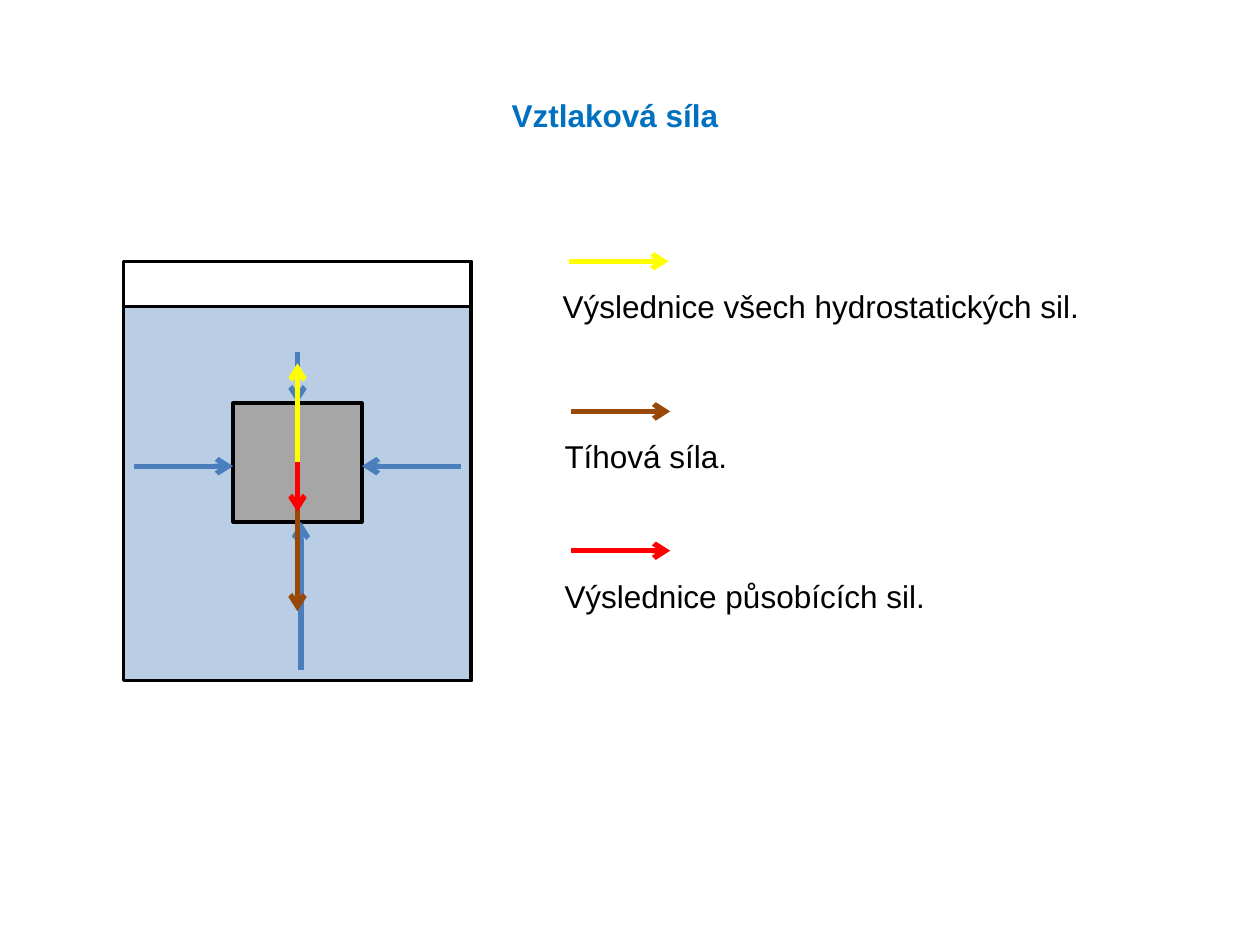
from lxml.etree import SubElement
from pptx import Presentation
from pptx.dml.color import RGBColor
from pptx.enum.shapes import MSO_CONNECTOR, MSO_SHAPE
from pptx.enum.text import MSO_AUTO_SIZE, PP_ALIGN
from pptx.oxml.ns import qn
from pptx.util import Pt


class Sketch:
    """Draws styled boxes, arrows and labels on one slide."""

    hues = {
        "title": "0070C0", "ink": "000000", "water": "B9CDE5", "block": "A6A6A6",
        "press": "4B7EBC", "lift": "FFFF00", "weight": "984807", "net": "FF0000",
    }
    text = {"name": "Arial", "size": Pt(18)}

    def __init__(self, slide):
        self.shapes = slide.shapes

    def hue(self, name):
        return RGBColor.from_string(self.hues[name])

    def box(self, left, top, width, height, fill=None):
        shape = self.shapes.add_shape(
            MSO_SHAPE.RECTANGLE, Pt(left), Pt(top), Pt(width), Pt(height))
        shape.shadow.inherit = False
        if fill:
            shape.fill.solid()
            shape.fill.fore_color.rgb = self.hue(fill)
        else:
            shape.fill.background()
        shape.line.color.rgb = self.hue("ink")
        shape.line.width = Pt(2)
        return shape

    def arrow(self, start, end, hue):
        line = self.shapes.add_connector(
            MSO_CONNECTOR.STRAIGHT, *map(Pt, start + end))
        line.line.color.rgb = self.hue(hue)
        line.line.width = Pt(3)
        props = line._element.spPr
        SubElement(props.find(qn("a:ln")), qn("a:tailEnd"), type="arrow")
        SubElement(props, qn("a:effectLst"))
        return line

    def label(self, words, left, top, width, hue="ink", wrap=False,
              align=PP_ALIGN.LEFT, bold=False):
        frame = self.shapes.add_textbox(
            Pt(left), Pt(top), Pt(width), Pt(29)).text_frame
        frame.word_wrap = wrap
        frame.auto_size = MSO_AUTO_SIZE.SHAPE_TO_FIT_TEXT
        para = frame.paragraphs[0]
        para.alignment = align
        run = para.add_run()
        run.text = words
        for key, value in {**self.text, "bold": bold}.items():
            setattr(run.font, key, value)
        run.font.color.rgb = self.hue(hue)

    def legend(self, words, left, top, width, hue):
        self.arrow((left, top), (left + 56.7, top), hue)
        self.label(words, left - 10.8, top + 11.3, width, hue="ink")


def main():
    deck = Presentation()
    deck.slide_width, deck.slide_height = Pt(720), Pt(540)
    art = Sketch(deck.slides.add_slide(deck.slide_layouts[6]))

    art.label("Vztlaková síla", 218.2, 51.1, 266.4, "title", True,
              PP_ALIGN.CENTER, True)

    art.box(70.6, 149.3, 198.7, 215.3)
    art.box(70.6, 175.1, 198.7, 213.9, "water")
    block = art.box(133.2, 230.4, 73.6, 67.8, "block")

    mid, core, side = 170, 264.3, 266.4
    art.arrow((172, 383), (172, 298.2), "press")
    art.arrow((mid, 201.3), (mid, 230.4), "press").end_connect(block, 0)
    art.arrow((76.5, side), (133.2, side), "press")
    art.arrow((263.5, side), (206.8, side), "press")

    for hue, reach in (("lift", -56.7), ("weight", 85), ("net", 28.3)):
        art.arrow((mid, core), (mid, core + reach), hue)

    for item in (
        ("Výslednice všech hydrostatických sil.", 325.3, 149.3, 312.5, "lift"),
        ("Tíhová síla.", 326.3, 235.1, 108.7, "weight"),
        ("Výslednice působících sil.", 326.3, 314.7, 222.5, "net"),
    ):
        art.legend(*item)

    deck.save("out.pptx")


if __name__ == "__main__":
    main()
